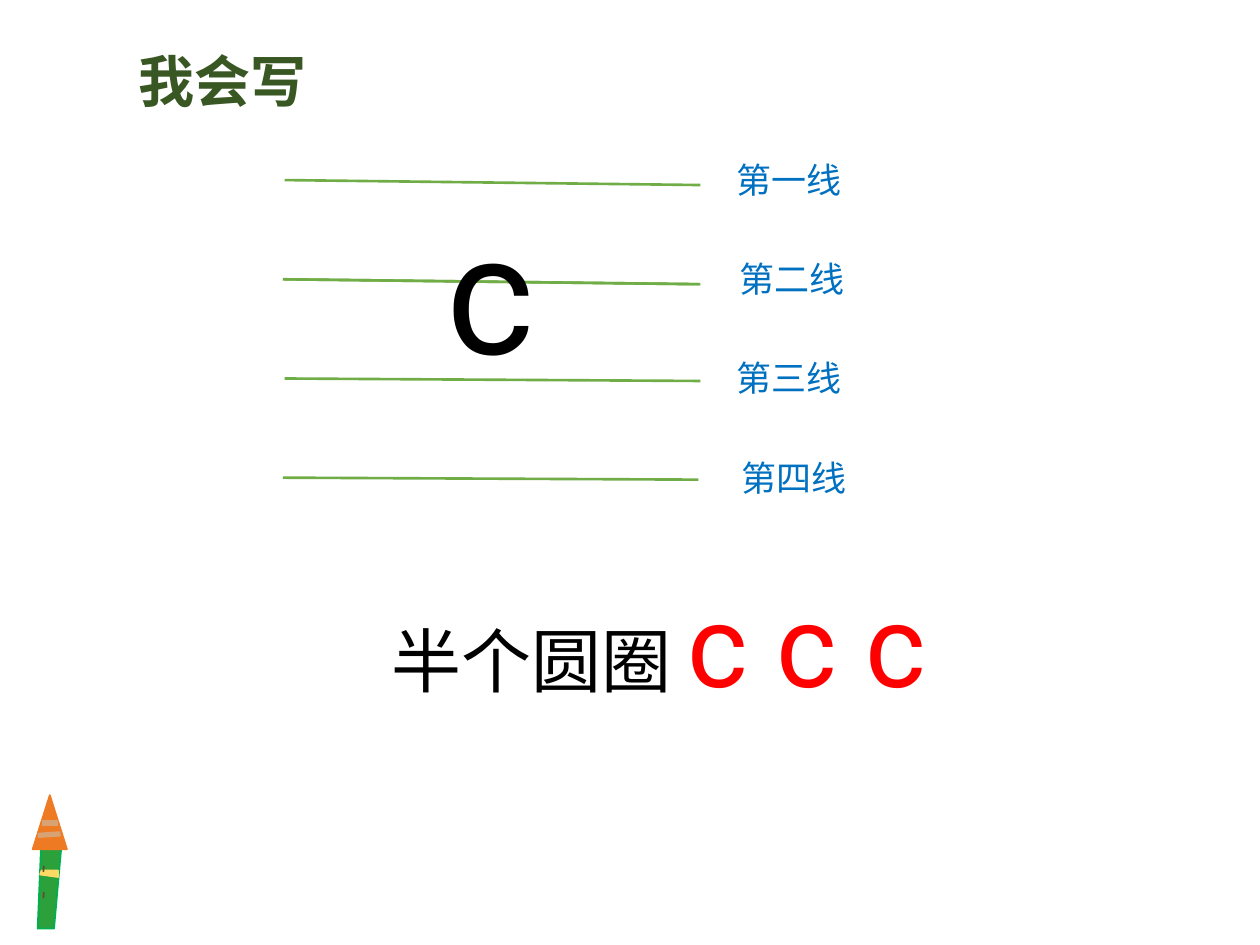
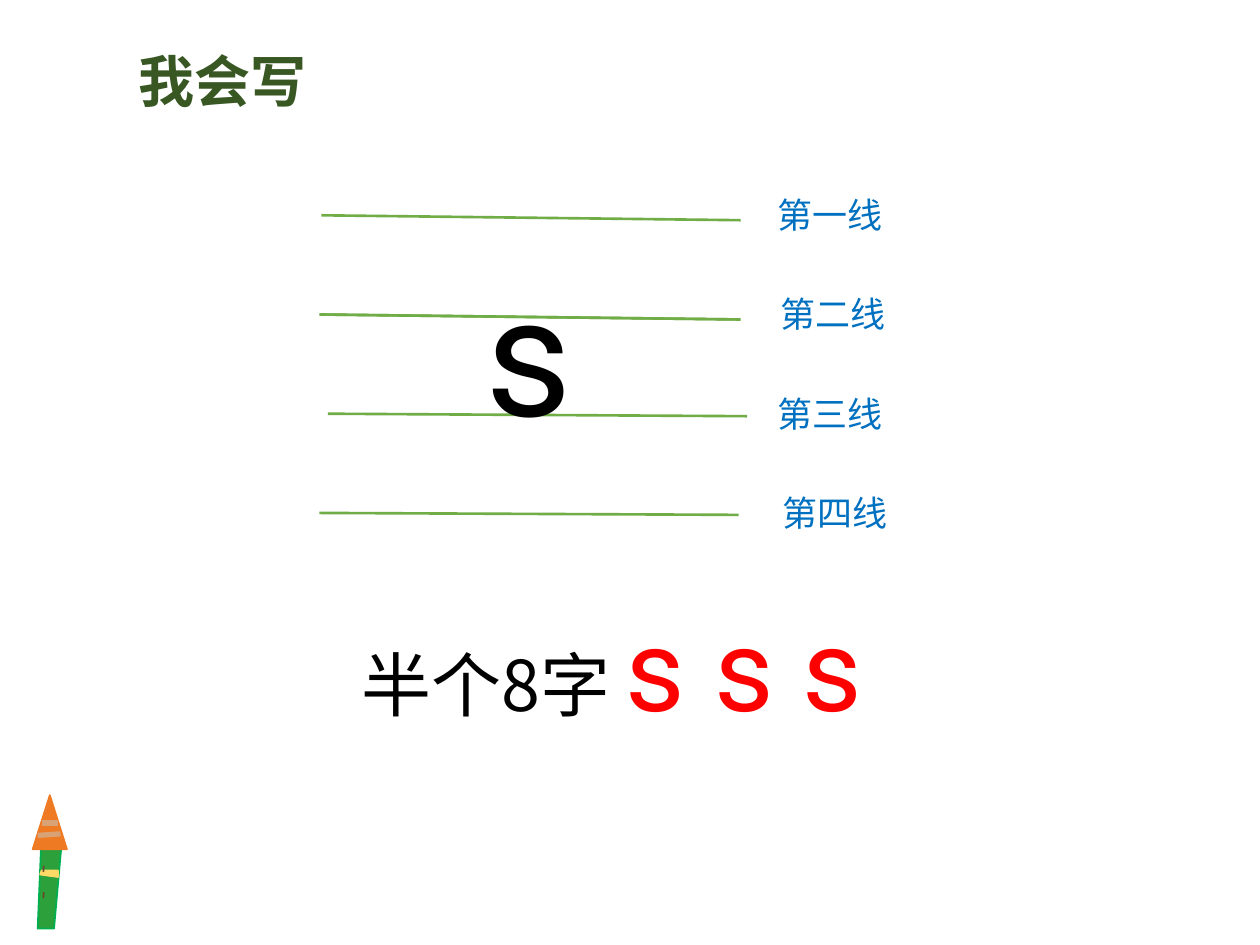
"""Build two handwriting slides for the letters c and s on a four-line stave."""
from dataclasses import dataclass

from lxml import etree
from pptx import Presentation
from pptx.dml.color import RGBColor
from pptx.enum.shapes import MSO_CONNECTOR, MSO_SHAPE
from pptx.enum.text import MSO_ANCHOR, MSO_AUTO_SIZE, PP_ALIGN
from pptx.oxml.ns import qn
from pptx.util import Cm, Pt

STRAIGHT = MSO_CONNECTOR.STRAIGHT
TRIANGLE = MSO_SHAPE.ISOSCELES_TRIANGLE
CHORD = MSO_SHAPE.CHORD
TOP = MSO_ANCHOR.TOP
GROW = MSO_AUTO_SIZE.SHAPE_TO_FIT_TEXT
LEFT, CENTER = PP_ALIGN.LEFT, PP_ALIGN.CENTER


@dataclass(frozen=True)
class Theme:
    title: str = "385723"
    ink: str = "000000"
    accent: str = "FF0000"
    label: str = "0070C0"
    stave: str = "70AD47"
    pencil_body: str = "2CA03B"
    pencil_edge: str = "00B050"
    pencil_tip: str = "EE7A24"
    pencil_spot: str = "69482C"
    pencil_band: str = "FFD966"
    pencil_stripe: str = "D9A275"
    chinese: str = "Noto Sans CJK SC"
    latin: str = "Roboto"
    title_size: int = 32
    letter_size: int = 96
    label_size: int = 20
    hint_size: int = 40
    sample_size: int = 66
    stave_width: float = 1.5
    edge_width: float = 1
    stripe_width: float = 3


THEME = Theme()
ROW_PITCH = 2
ROW_NAMES = ("第一线", "第二线", "第三线", "第四线")
LABEL_SHIFTS = (0, 0.05, 0, 0.1)
LABEL_RISE = 0.56
ROW_SLOPES = (0.1, 0.1, 0.05, 0.04)
SPOT_ANGLES = (89.45, 132.13)

LESSONS = (
    {
        "letter": "c", "hint": "半个圆圈 ",
        "stave": (5.74, 3.63), "length": 8.38, "third_shift": 0, "label_gap": 8.86,
        "letter_box": (7.92, 3.63, 4.19, 8.46), "hint_box": (7.65, 11.4, 12.7, 3.07),
    },
    {
        "letter": "s", "hint": "半个8字 ",
        "stave": (6.48, 4.34), "length": 8.45, "third_shift": 0.13, "label_gap": 8.95,
        "letter_box": (8.69, 4.88, 6.35, 4.37), "hint_box": (7.04, 11.89, 12.07, 3.07),
    },
)


class Deck:
    """Hold the theme, the presentation and the place where elements are drawn."""

    def __init__(self, theme):
        self.theme = theme
        self.presentation = Presentation()
        self.presentation.slide_width = Cm(25.4)
        self.presentation.slide_height = Cm(19.05)
        self.slide = None
        self.shapes = None

    def new_slide(self):
        blank = self.presentation.slide_layouts[6]
        self.slide = self.presentation.slides.add_slide(blank)
        self.ungroup()

    def group(self):
        self.shapes = self.slide.shapes.add_group_shape().shapes

    def ungroup(self):
        self.shapes = self.slide.shapes

    def paint(self, shape, fill, edge):
        shape.shadow.inherit = False
        shape.fill.solid()
        shape.fill.fore_color.rgb = RGBColor.from_string(fill)
        shape.line.color.rgb = RGBColor.from_string(edge)
        shape.line.width = Pt(self.theme.edge_width)

    def preset(self, kind, box, color, rotation=0, angles=()):
        shape = self.shapes.add_shape(kind, *map(Cm, box))
        shape.rotation = rotation
        for index, angle in enumerate(angles):
            shape.adjustments[index] = angle * 0.6
        self.paint(shape, color, color)

    def outline(self, points, fill, edge):
        start, *rest = [(Cm(x), Cm(y)) for x, y in points]
        builder = self.shapes.build_freeform(*start)
        builder.add_line_segments(rest, close=True)
        self.paint(builder.convert_to_shape(), fill, edge)

    def line(self, start, end, color, width):
        connector = self.shapes.add_connector(STRAIGHT, *map(Cm, (*start, *end)))
        connector.line.color.rgb = RGBColor.from_string(color)
        connector.line.width = Pt(width)
        etree.SubElement(connector._element.spPr, qn("a:effectLst"))

    def text(self, box, pieces, align=LEFT, wrap=True):
        frame = self.shapes.add_textbox(*map(Cm, box)).text_frame
        frame_format = {"word_wrap": wrap, "auto_size": GROW, "vertical_anchor": TOP}
        for name, value in frame_format.items():
            setattr(frame, name, value)
        paragraph = frame.paragraphs[0]
        paragraph.alignment = align
        for words, face, size, color, bold in pieces:
            run = paragraph.add_run()
            run.text = words
            font_format = {"name": face, "size": Pt(size), "bold": bold}
            for name, value in font_format.items():
                setattr(run.font, name, value)
            run.font.color.rgb = RGBColor.from_string(color)
            etree.SubElement(run.font._element, qn("a:ea"), typeface=face)

    def pencil(self):
        t = self.theme
        self.group()
        body = ((0.84, 16.79), (1.24, 17.04), (1.09, 18.72), (0.76, 18.72))
        band = ((0.84, 17.55), (1.17, 17.55), (1.17, 17.68), (0.81, 17.63))
        self.outline(body, t.pencil_body, t.pencil_edge)
        self.preset(TRIANGLE, (0.66, 16.03, 0.69, 1.09), t.pencil_tip)
        self.outline(band, t.pencil_band, t.pencil_band)
        for top in (17.45, 17.98):
            self.preset(CHORD, (0.66, top, 0.66, 0.23), t.pencil_spot, 90, SPOT_ANGLES)
        for start, end in (((0.84, 16.59), (1.17, 16.59)), ((0.76, 16.84), (1.22, 16.81))):
            self.line(start, end, t.pencil_stripe, t.stripe_width)
        self.ungroup()

    def title(self, words):
        t = self.theme
        pieces = [(words, t.chinese, t.title_size, t.title, True)]
        self.text((2.51, 0.81, 3.94, 1.63), pieces, CENTER, wrap=False)

    def stave(self, lesson):
        t = self.theme
        left, top = lesson["stave"]
        self.group()
        rows = ((0, 0), (1, 0), (1, -0.04), (2, lesson["third_shift"]), (3, -0.04))
        for row, shift in rows:
            x, y = left + shift, top + row * ROW_PITCH
            end = (x + lesson["length"], y + ROW_SLOPES[row])
            self.line((x, y), end, t.stave, t.stave_width)
        letter = (" " + lesson["letter"], t.latin, t.letter_size, t.ink, False)
        self.text(lesson["letter_box"], [letter])
        for row, (name, shift) in enumerate(zip(ROW_NAMES, LABEL_SHIFTS)):
            x = left + lesson["label_gap"] + shift
            y = top + row * ROW_PITCH - LABEL_RISE
            self.text((x, y, 3.2, 1.96), [(name, t.chinese, t.label_size, t.label, False)])
        self.ungroup()

    def hint(self, lesson):
        t = self.theme
        samples = " ".join(lesson["letter"] * 3)
        self.text(lesson["hint_box"], [
            (lesson["hint"], t.chinese, t.hint_size, t.ink, False),
            (samples, t.latin, t.sample_size, t.accent, False),
        ])


def main():
    deck = Deck(THEME)
    for lesson in LESSONS:
        deck.new_slide()
        deck.pencil()
        deck.title("我会写")
        deck.stave(lesson)
        deck.hint(lesson)
    deck.presentation.save("out.pptx")


if __name__ == "__main__":
    main()
